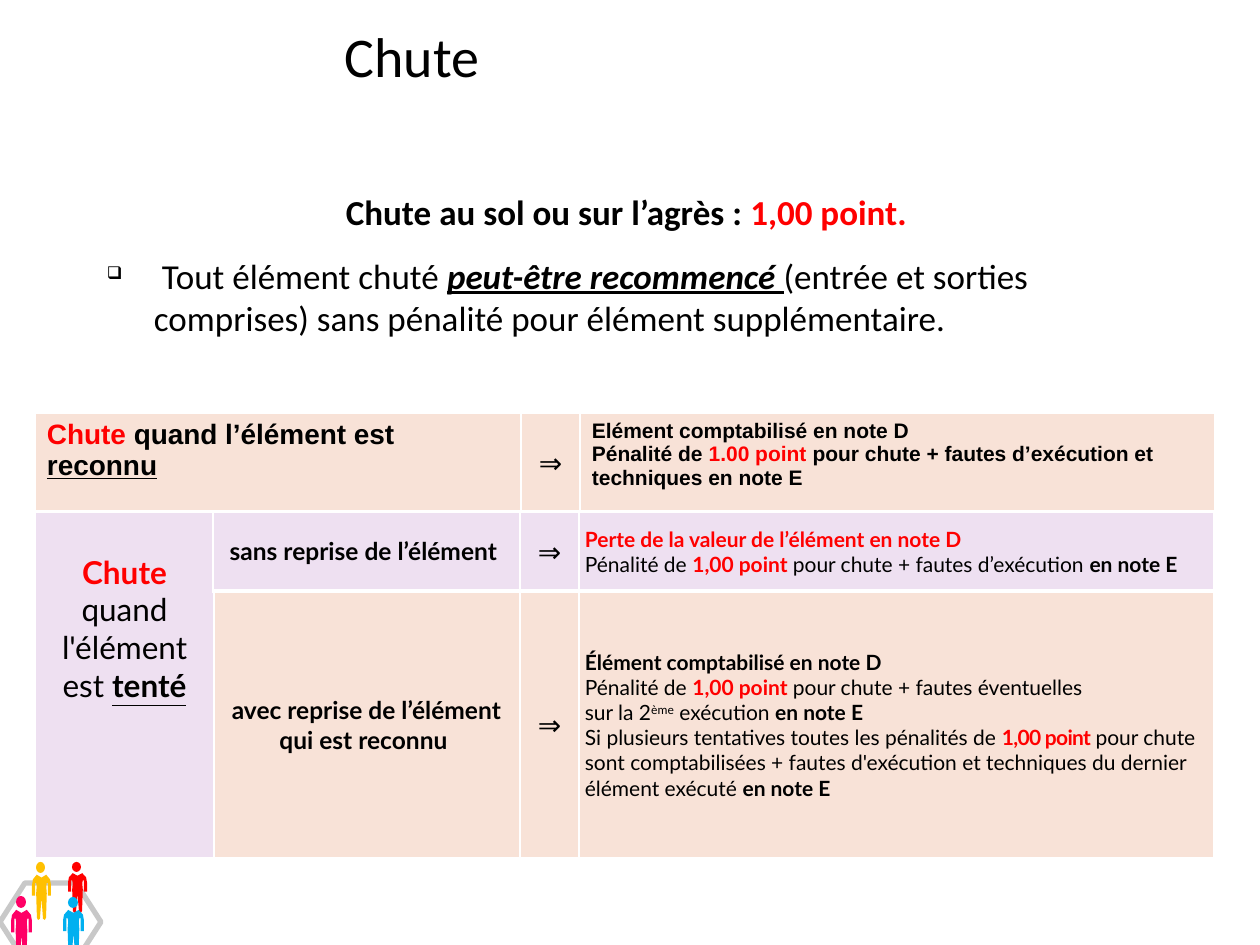
from lxml.etree import SubElement
from pptx import Presentation
from pptx.dml.color import RGBColor as RGB
from pptx.enum.shapes import MSO_SHAPE as SHAPE
from pptx.enum.text import MSO_ANCHOR as ANCHOR, PP_ALIGN as ALIGN
from pptx.oxml.ns import qn
from pptx.util import Pt

PX = 7257  # EMU per pixel, 126 pixels to the inch
COLORS = {"black": "000000", "red": "FF0000", "white": "FFFFFF",
          "peach": "F8E2D7", "lilac": "EEE0F1", "grey": "C8C8C8",
          "pink": "FF0066", "amber": "FFC000", "blue": "00B0F0"}
BOLD = {"bold": True}
RED = {"color": "red"}
RED_BOLD = {"color": "red", "bold": True}
STRESSED = {"bold": True, "underline": True}


def write_text(frame, paragraphs, base, align, margins, anchor):
    """Fill a frame; each paragraph is a list of (text, format) runs."""
    frame.word_wrap = True
    for index, runs in enumerate(paragraphs):
        paragraph = frame.paragraphs[0] if index == 0 else frame.add_paragraph()
        paragraph.alignment = align
        for text, extra in runs:
            run = paragraph.add_run()
            run.text = text
            values = {"color": "black", "bold": False, **base, **extra}
            run.font.color.rgb = RGB.from_string(COLORS[values.pop("color")])
            for name in ("baseline", "spc"):
                if name in values:
                    run._r.get_or_add_rPr().set(name, values.pop(name))
            for name, value in values.items():
                setattr(run.font, name, value)
    # a cell and a text frame name these settings the same way
    return {**margins, "vertical_anchor": anchor}


presentation = Presentation()
presentation.slide_width, presentation.slide_height = 1260 * PX, 945 * PX
slide = presentation.slides.add_slide(presentation.slide_layouts[6])
shapes = slide.shapes

# Hexagon behind the figures
hexagon = shapes.add_shape(SHAPE.HEXAGON, 0, 883 * PX, 101 * PX, 78 * PX)
hexagon.adjustments[0] = 0.32
hexagon.shadow.inherit = False
hexagon.fill.background()
hexagon.line.color.rgb = RGB.from_string(COLORS["grey"])
hexagon.line.width = Pt(3)

# Figures: left half of the body in percent of the figure, mirrored for the right
half_body = [(50, 27), (25, 22), (5, 30), (0, 40), (0, 58), (16, 58), (16, 36),
             (22, 36), (25, 42), (22, 54), (26, 96), (32, 100), (42, 98), (50, 62)]
body = half_body + [(100 - x, y) for x, y in half_body[-2:0:-1]]
figures = [("pink", 11, 896, 21, 63), ("amber", 32, 862, 19, 58),
           ("red", 68, 862, 19, 51), ("blue", 63, 897, 21, 59)]
for color, left, top, width, height in figures:
    points = [(round((left + width * x / 100) * PX), round((top + height * y / 100) * PX))
              for x, y in body]
    builder = shapes.build_freeform(*points[0])
    builder.add_line_segments(points[1:], close=True)
    head = shapes.add_shape(SHAPE.OVAL, (left + width // 4) * PX, top * PX,
                            width // 2 * PX, height // 5 * PX)
    for shape in (head, builder.convert_to_shape()):
        shape.shadow.inherit = False
        shape.fill.solid()
        shape.fill.fore_color.rgb = RGB.from_string(COLORS[color])
        shape.line.fill.background()

# Title and body text
wide = {"margin_left": 12 * PX, "margin_right": 12 * PX,
        "margin_top": 6 * PX, "margin_bottom": 6 * PX}
narrow = {"margin_left": 6 * PX, "margin_right": 6 * PX,
          "margin_top": 0, "margin_bottom": 0}
lowered = {**wide, "margin_top": 41 * PX}
text_boxes = [
    ((95, 185, 1063, 467), 20, ALIGN.LEFT, ANCHOR.TOP, [
        [("Chute au sol ou sur l’agrès : ", BOLD), ("1,00 point.", RED_BOLD)],
        [(" Tout élément chuté ", {}),
         ("peut-être recommencé ", {**STRESSED, "italic": True}),
         ("(entrée et sorties comprises) sans pénalité pour élément supplémentaire.", {})]]),
    ((184, 16, 456, 79), 32, ALIGN.CENTER, ANCHOR.MIDDLE, [[("Chute", {})]]),
]
frames = []
for box, size, align, anchor, paragraphs in text_boxes:
    frame = shapes.add_textbox(*(value * PX for value in box)).text_frame
    settings = write_text(frame, paragraphs, {"size": Pt(size), "name": "Calibri"},
                          align, wide, anchor)
    for name, value in settings.items():
        setattr(frame, name, value)
    frames.append(frame)

# Centred heading, then a bulleted paragraph with a hanging indent
heading, bulleted = frames[0].paragraphs
heading.alignment = ALIGN.CENTER
heading.space_after = bulleted.space_before = bulleted.space_after = Pt(6)
for paragraph in (heading, bulleted):
    properties = paragraph._p.get_or_add_pPr()
    properties.set("marL", str(47 * PX))
    properties.set("indent", str(-47 * PX))
SubElement(properties, qn("a:buSzPct")).set("val", "50000")
SubElement(properties, qn("a:buChar")).set("char", "❑")

# Cells: paragraphs, font, size, alignment, margins, anchor
arrow = ([[("⇒", {})]], "Lato", 16, ALIGN.CENTER, narrow, ANCHOR.MIDDLE)
label = ("Lato", 14, ALIGN.CENTER, narrow, ANCHOR.MIDDLE)
rule = ("Lato", 12, ALIGN.LEFT, narrow, ANCHOR.MIDDLE)

recognised = [
    ([[("Chute", RED_BOLD), (" quand l’élément est ", BOLD), ("reconnu", STRESSED)]],
     "Arial", 16, ALIGN.LEFT, wide, ANCHOR.TOP),
    arrow,
    ([[("Elément comptabilisé en note D", BOLD)],
      [("Pénalité de ", BOLD), ("1.00 point ", RED_BOLD),
       ("pour chute + fautes d’exécution et techniques en note E", BOLD)]],
     "Arial", 12, ALIGN.LEFT, wide, ANCHOR.TOP),
]
retried = [
    ([[("avec reprise de l’élément qui est reconnu ", BOLD)]], *label),
    arrow,
    ([[("Élément comptabilisé en note D", BOLD)],
      [("Pénalité de ", {}), ("1,00 point ", RED_BOLD),
       ("pour chute + fautes éventuelles", {})],
      [("sur la 2", {}), ("ème", {"baseline": "30000"}), (" exécution ", {}),
       ("en note E", BOLD)],
      [("Si plusieurs tentatives toutes les pénalités de ", {}),
       ("1,00 point ", {**RED_BOLD, "spc": "-40"}),
       ("pour chute sont comptabilisées + fautes d'exécution et techniques "
        "du dernier élément exécuté ", {}), ("en note E", BOLD)]], *rule),
]
attempted = [
    ([[("Chute", RED_BOLD), (" quand l'élément est ", {}), ("tenté", STRESSED)]],
     "Lato", 18, ALIGN.CENTER, lowered, ANCHOR.TOP),
]
not_retried = [
    ([[("sans reprise de l’élément ", BOLD)]], *label),
    arrow,
    ([[("Perte de la valeur de l’élément en note D", RED_BOLD)],
      [("Pénalité de ", {}), ("1,00 point ", RED_BOLD),
       ("pour chute + fautes d’exécution ", {}), ("en note E", BOLD)]], *rule),
]

# One-row tables: left, top, height, column widths, fill, cells
tables = [
    (35, 413, 99, (486, 59, 635), "peach", recognised),
    (213, 591, 268, (307, 59, 635), "peach", retried),
    (35, 512, 347, (179,), "lilac", attempted),
    (213, 512, 79, (307, 59, 635), "lilac", not_retried),
]
borders = {"a:lnL": 1, "a:lnR": 1, "a:lnT": 1, "a:lnB": 3}
for left, top, height, widths, fill, cells in tables:
    table = shapes.add_table(1, len(widths), left * PX, top * PX,
                             sum(widths) * PX, height * PX).table
    table.first_row = table.horz_banding = False
    for column, (width, content) in enumerate(zip(widths, cells)):
        table.columns[column].width = width * PX
        cell = table.cell(0, column)
        paragraphs, font, size, align, margins, anchor = content
        settings = write_text(cell.text_frame, paragraphs,
                              {"size": Pt(size), "name": font}, align, margins, anchor)
        for name, value in settings.items():
            setattr(cell, name, value)
        for tag, points in borders.items():
            line = SubElement(cell._tc.get_or_add_tcPr(), qn(tag), w=str(Pt(points)))
            solid = SubElement(line, qn("a:solidFill"))
            SubElement(solid, qn("a:srgbClr"), val=COLORS["white"])
        cell.fill.solid()
        cell.fill.fore_color.rgb = RGB.from_string(COLORS[fill])

presentation.save("out.pptx")
